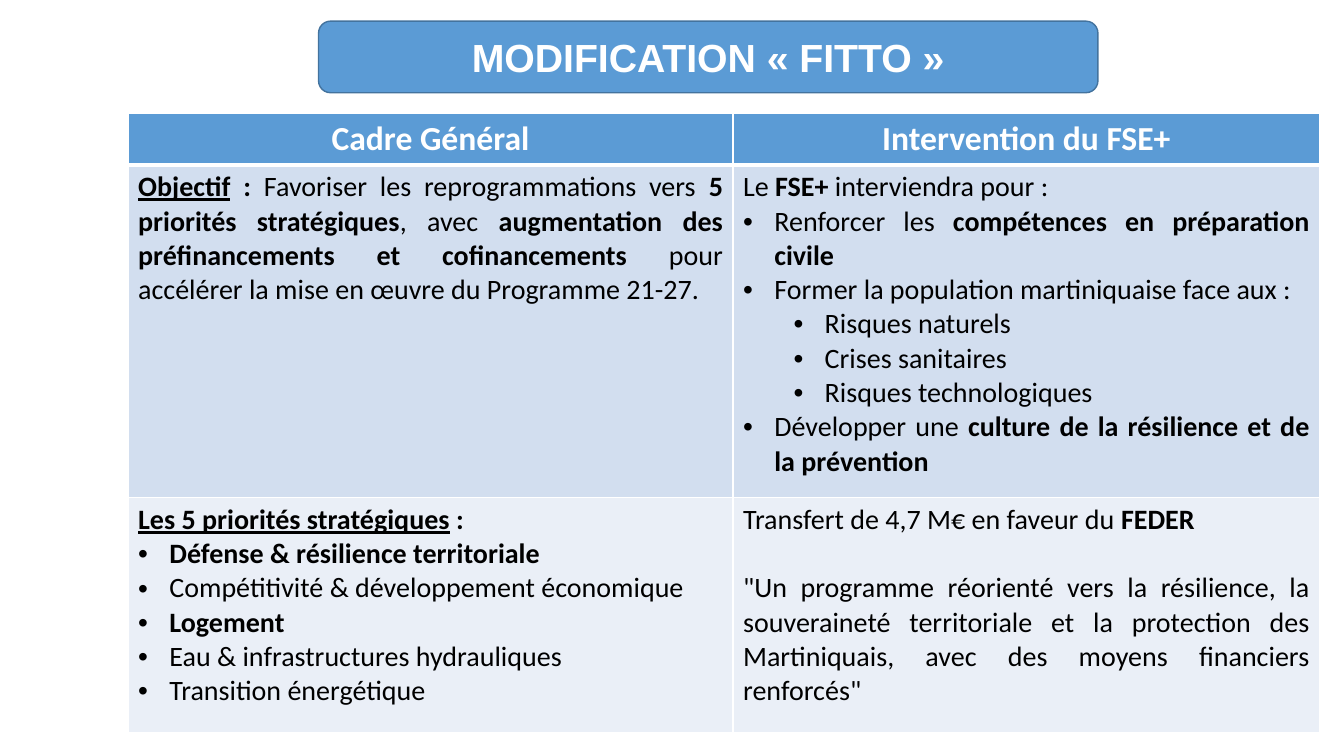
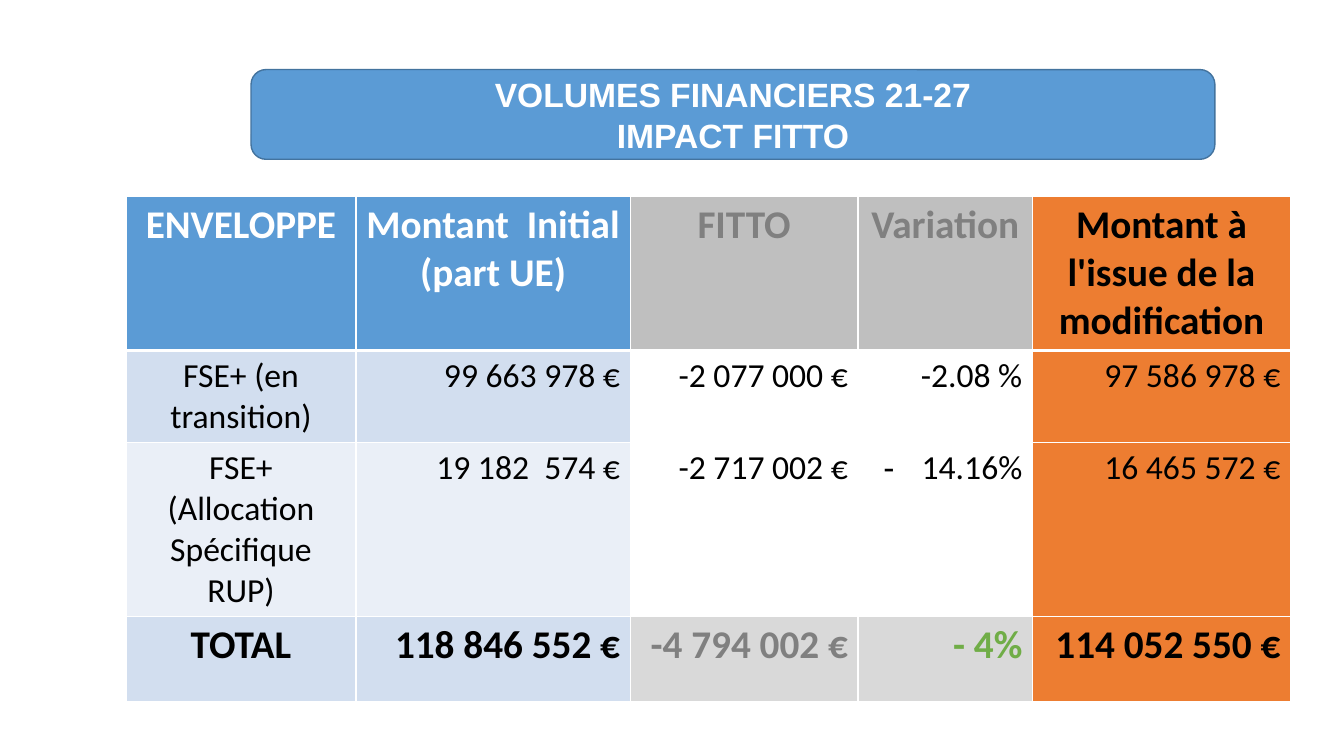
from lxml import etree
from pptx import Presentation
from pptx.dml.color import RGBColor
from pptx.enum.shapes import MSO_SHAPE
from pptx.enum.text import MSO_ANCHOR, PP_ALIGN
from pptx.oxml.ns import qn
from pptx.util import Pt

PX = 9144  # 100 px to the inch
ROUND = MSO_SHAPE.ROUNDED_RECTANGLE
MIDDLE = MSO_ANCHOR.MIDDLE
ALIGN = {"l": PP_ALIGN.LEFT, "c": PP_ALIGN.CENTER,
         "r": PP_ALIGN.RIGHT, "j": PP_ALIGN.JUSTIFY}
HEX = {"blue": "5B9BD5", "edge": "43739E", "band": "D2DEEF", "pale": "EAEFF7",
       "white": "FFFFFF", "black": "000000", "gray": "808080",
       "silver": "BFBFBF", "light": "D9D9D9", "orange": "ED7D31",
       "green": "70AD47"}


def para(*runs, al="l", ind=0, hang=0, mark="", level=0, gap=0):
    """Describe a paragraph; a run is a text or a (text, style) pair, style of b and u."""
    return dict(runs=[(r, "") if isinstance(r, str) else r for r in runs],
                al=al, ind=ind, hang=hang, mark=mark, level=level, gap=gap)


def item(*runs, al="l", level=0):
    return para(*runs, al=al, ind=31 + 50 * level, hang=31, mark="•", level=level)


def cell(fill, *paras, size=20, color="black"):
    return dict(fill=fill, paras=paras, size=size, color=color)


def head(*lines, fill="blue", color="white", size=28):
    return cell(fill, *[para((t, "b"), al="c") for t in lines],
                size=size, color=color)


GOAL = [
    para(("Objectif", "bu"), (" :", "b"), " Favoriser les reprogrammations vers ",
         ("5 priorités stratégiques", "b"), ", avec ",
         ("augmentation des préfinancements et cofinancements", "b"),
         " pour accélérer la mise en œuvre du Programme 21-27.", al="j"),
]
ACTIONS = [
    para("Le ", ("FSE+", "b"), " interviendra pour :"),
    item("Renforcer les ", ("compétences en préparation civile", "b"), al="j"),
    item("Former la population martiniquaise face aux :", al="j"),
    *[item(t, al="j", level=1) for t in
      ("Risques naturels", "Crises sanitaires", "Risques technologiques")],
    item("Développer une ",
         ("culture de la résilience et de la prévention", "b"), al="j"),
]
AIMS = [
    para(("Les 5 priorités stratégiques", "bu"), (" :", "b")),
    item(("Défense & résilience territoriale", "b")),
    item("Compétitivité & développement économique"),
    item(("Logement", "b")),
    item("Eau & infrastructures hydrauliques"),
    item("Transition énergétique"),
]
SHIFT = [
    para("Transfert de 4,7 M€ en faveur du ", ("FEDER", "b"), al="j"),
    para('"Un programme réorienté vers la résilience, la souveraineté '
         'territoriale et la protection des Martiniquais, avec des moyens '
         'financiers renforcés"', al="j", gap=24.5),
]
FRAME = [
    [head("Cadre Général", size=24), head("Intervention du FSE+", size=24)],
    [cell("band", *GOAL), cell("band", *ACTIONS)],
    [cell("pale", *AIMS), cell("pale", *SHIFT)],
]

FUNDS = [
    ("FSE+ (en transition)", "99 663 978 €", "-2 077 000 €", "-2.08 %", "97 586 978 €"),
    ("FSE+ (Allocation Spécifique RUP)", "19 182  574 €", "-2 717 002 €",
     para("14.16%", al="r", ind=38, hang=38, mark="-"), "16 465 572 €"),
]
TOTAL = ("TOTAL", "118 846 552 €", "-4 794 002 €", "- 4%", "114 052 550 €")
INKS = ("black", "black", "gray", "green", "black")


def line(texts, fills, inks=("black",) * 5, size=24, style=""):
    """Build a row of amounts: first column centred, the others right-aligned."""
    row = []
    for i, (text, fill, ink) in enumerate(zip(texts, fills, inks)):
        if isinstance(text, str):
            text = para((text, style), al="r" if i else "c")
        row.append(cell(fill, text, size=size, color=ink))
    return row


def fills(name, mid):
    return (name, name, mid, mid, "orange")


BUDGET = [
    [head("ENVELOPPE"), head("Montant  Initial", "(part UE)"),
     head("FITTO", fill="silver", color="gray"),
     head("Variation", fill="silver", color="gray"),
     head("Montant à l'issue de la modification", fill="orange", color="black")],
    line(FUNDS[0], fills("band", "white")),
    line(FUNDS[1], fills("pale", "white")),
    line(TOTAL, fills("band", "light"), INKS, 28, "b"),
]

SLIDES = [
    dict(title=["MODIFICATION « FITTO »"], size=28, box=(316, 21, 773, 71),
         grid=FRAME, at=(127, 113), cols=(600, 582), rows=(48, 330, 233)),
    dict(title=["VOLUMES FINANCIERS 21-27", "IMPACT FITTO"], size=24,
         box=(249, 69, 956, 89), grid=BUDGET, at=(125, 195),
         cols=(228, 272, 226, 173, 256), rows=(150, 90, 170, 84)),
]


def rgb(name):
    return RGBColor.from_string(HEX[name])


def paint(part, name):
    part.fill.solid()
    part.fill.fore_color.rgb = rgb(name)


def bullet(ppr, mark):
    tint = etree.SubElement(ppr, qn("a:buClr"))
    etree.SubElement(tint, qn("a:srgbClr"), val=HEX["black"])
    etree.SubElement(ppr, qn("a:buFont"), typeface="Arial")
    etree.SubElement(ppr, qn("a:buChar"), char=mark)


def write(frame, paras, size, color, font):
    for i, spec in enumerate(paras):
        p = frame.add_paragraph() if i else frame.paragraphs[0]
        p.alignment = ALIGN[spec["al"]]
        p.level = spec["level"]
        if spec["gap"]:
            p.space_before = Pt(spec["gap"])
        if spec["mark"]:
            ppr = p._p.get_or_add_pPr()
            ppr.set("marL", str(spec["ind"] * PX))
            ppr.set("indent", str(-spec["hang"] * PX))
            bullet(ppr, spec["mark"])
        for text, style in spec["runs"]:
            run = p.add_run()
            run.text = text
            run.font.name, run.font.size = font, Pt(size)
            run.font.bold, run.font.underline = "b" in style, "u" in style
            run.font.color.rgb = rgb(color)


def edges(box, row):
    """Draw white borders, thicker under the header row."""
    tcpr = box._tc.get_or_add_tcPr()
    thick = {"B": row == 0, "T": row == 1}
    for side in "LRTB":
        width = Pt(3 if thick.get(side) else 1)
        ln = etree.SubElement(tcpr, qn("a:ln" + side), w=str(width))
        fill = etree.SubElement(ln, qn("a:solidFill"))
        etree.SubElement(fill, qn("a:srgbClr"), val=HEX["white"])


def add_grid(slide, grid, at, cols, rows):
    place = [n * PX for n in (*at, sum(cols), sum(rows))]
    table = slide.shapes.add_table(len(rows), len(cols), *place).table
    table.horz_banding = False
    for col, width in zip(table.columns, cols):
        col.width = width * PX
    for r, height in enumerate(rows):
        table.rows[r].height = height * PX
        for c, spec in enumerate(grid[r]):
            box = table.cell(r, c)
            edges(box, r)
            paint(box, spec["fill"])
            write(box.text_frame, spec["paras"], spec["size"], spec["color"],
                  "Calibri")


def add_title(slide, lines, size, box):
    shape = slide.shapes.add_shape(ROUND, *[n * PX for n in box])
    shape.shadow.inherit = False
    paint(shape, "blue")
    shape.line.color.rgb = rgb("edge")
    shape.line.width = Pt(1)
    frame = shape.text_frame
    frame.word_wrap = True
    frame.vertical_anchor = MIDDLE
    write(frame, [para((t, "b"), al="c") for t in lines], size, "white", "Arial")


def main():
    deck = Presentation()
    deck.slide_width, deck.slide_height = 1333 * PX, 750 * PX
    for page in SLIDES:
        slide = deck.slides.add_slide(deck.slide_layouts[6])
        add_grid(slide, page["grid"], page["at"], page["cols"], page["rows"])
        add_title(slide, page["title"], page["size"], page["box"])
    deck.save("out.pptx")


if __name__ == "__main__":
    main()
